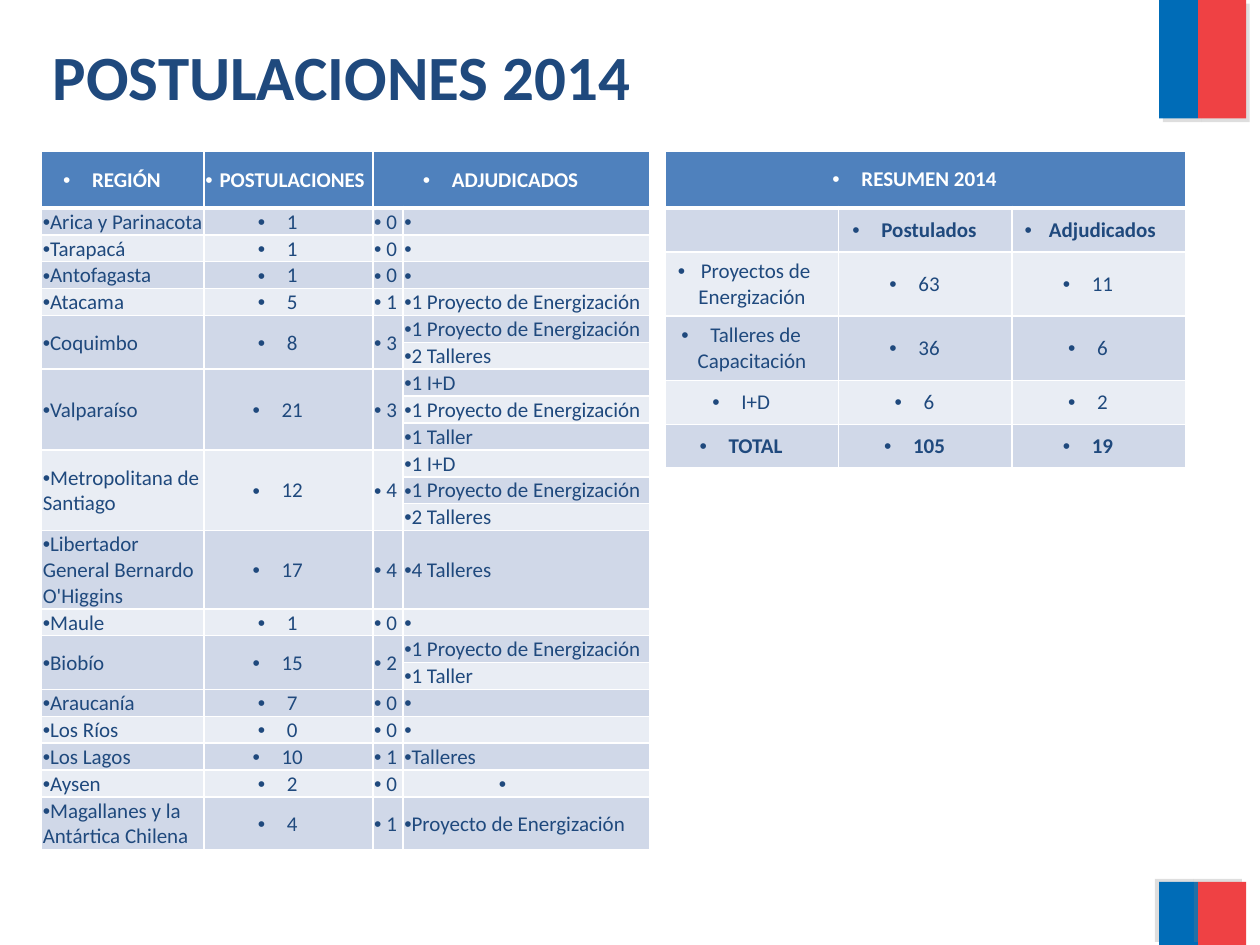
from lxml import etree
from pptx import Presentation
from pptx.dml.color import RGBColor
from pptx.enum.shapes import MSO_SHAPE
from pptx.enum.text import MSO_ANCHOR, PP_ALIGN
from pptx.oxml.ns import qn
from pptx.util import Inches, Pt

RECT = MSO_SHAPE.RECTANGLE
TOP, MIDDLE = MSO_ANCHOR.TOP, MSO_ANCHOR.MIDDLE
LEFT, CENTER = PP_ALIGN.LEFT, PP_ALIGN.CENTER
FONT = "Calibri"
NAVY, WHITE, HEAD = "1F497D", "FFFFFF", "4F81BD"
BANDS = ("E9EDF4", "D0D8E8")
BLANK = " "
LINE = 0.213

PROJECT = "1 Proyecto de Energización"
REGIONS = [
    ("Arica y Parinacota", 1, 0, [BLANK], 1),
    ("Tarapacá", 1, 0, [BLANK], 1),
    ("Antofagasta", 1, 0, [BLANK], 1),
    ("Atacama", 5, 1, [PROJECT], 1),
    ("Coquimbo", 8, 3, [PROJECT, "2 Talleres"], 1),
    ("Valparaíso", 21, 3, ["1 I+D", PROJECT, "1 Taller"], 1),
    ("Metropolitana de Santiago", 12, 4, ["1 I+D", PROJECT, "2 Talleres"], 1),
    ("Libertador General Bernardo O'Higgins", 17, 4, ["4 Talleres"], 3),
    ("Maule", 1, 0, [BLANK], 1),
    ("Biobío", 15, 2, [PROJECT, "1 Taller"], 1),
    ("Araucanía", 7, 0, [BLANK], 1),
    ("Los Ríos", 0, 0, [BLANK], 1),
    ("Los Lagos", 10, 1, ["Talleres"], 1),
    ("Aysen", 2, 0, [BLANK], 1),
    ("Magallanes y la Antártica Chilena", 4, 1, ["Proyecto de Energización"], 2),
]
SUMMARY = [
    ("", "Postulados", "Adjudicados"),
    ("Proyectos de Energización", 63, 11),
    ("Talleres de Capacitación", 36, 6),
    ("I+D", 6, 2),
    ("TOTAL", 105, 19),
]


def color(code):
    return RGBColor.from_string(code)


def style(para, size, code, bold):
    for run in para.runs:
        font = run.font
        font.name, font.size, font.bold = FONT, Pt(size), bold
        font.color.rgb = color(code)


def bullet(para, indent):
    props = para._p.get_or_add_pPr()
    props.set("marL", "0")
    props.set("indent", str(Inches(indent)))
    space = etree.SubElement(props, qn("a:spcBef"))
    etree.SubElement(space, qn("a:spcPct"), val="20000")
    etree.SubElement(props, qn("a:buFont"), typeface="Arial")
    etree.SubElement(props, qn("a:buChar"), char="•")


def fill_cell(cell, text, align=CENTER, code=NAVY, bold=False):
    cell.vertical_anchor = MIDDLE
    cell.text_frame.text = str(text)
    para = cell.text_frame.paragraphs[0]
    para.alignment = align
    if text == "":
        etree.SubElement(para._p, qn("a:endParaRPr"), sz="1200")
    else:
        bullet(para, -0.23 if align == CENTER else 0)
        style(para, 12, code, bold)


def underline(cell):
    line = etree.Element(qn("a:lnB"), w=str(Pt(3)))
    fill = etree.SubElement(line, qn("a:solidFill"))
    etree.SubElement(fill, qn("a:srgbClr"), val=WHITE)
    cell._tc.get_or_add_tcPr().insert(0, line)


def add_grid(slide, box, cols, rows, inset=None):
    frame = slide.shapes.add_table(len(rows), len(cols), *map(Inches, box))
    table = frame.table
    for col, width in zip(table.columns, cols):
        col.width = Inches(width)
    for pos, (row, height) in enumerate(zip(table.rows, rows)):
        row.height = Inches(height)
        for cell in row.cells:
            cell.fill.solid()
            cell.fill.fore_color.rgb = color(BANDS[pos % 2] if pos else HEAD)
            if pos == 0:
                underline(cell)
            if inset is not None:
                cell.margin_left = cell.margin_right = Inches(inset)
                cell.margin_top, cell.margin_bottom = Inches(inset), 0
    return table


def add_regions(slide, box):
    rows = [0.45]
    for *_, items, lines in REGIONS:
        rows += [LINE * lines if lines == 1 else 0.207 * lines] * len(items)
    table = add_grid(slide, box, (1.29, 1.34, 0.24, 1.96), rows, 0.01)
    table.cell(0, 2).merge(table.cell(0, 3))
    for col, text in enumerate(("REGIÓN", "POSTULACIONES", "ADJUDICADOS")):
        fill_cell(table.cell(0, col), text, code=WHITE, bold=True)
    top = 1
    for name, sent, won, items, _ in REGIONS:
        for col, text in enumerate((name, sent, won)):
            if len(items) > 1:
                table.cell(top, col).merge(table.cell(top + len(items) - 1, col))
            fill_cell(table.cell(top, col), text, CENTER if col else LEFT)
        for row, item in enumerate(items, top):
            fill_cell(table.cell(row, 3), item, CENTER if name == "Aysen" else LEFT)
        top += len(items)


def add_summary(slide, box):
    rows = (0.45, 0.35, 0.51, 0.51, 0.35, 0.34)
    table = add_grid(slide, box, [box[2] / 3] * 3, rows)
    table.cell(0, 0).merge(table.cell(0, 2))
    fill_cell(table.cell(0, 0), "RESUMEN 2014", code=WHITE, bold=True)
    for row, line in enumerate(SUMMARY, 1):
        for col, text in enumerate(line):
            fill_cell(table.cell(row, col), text, bold=row in (1, len(SUMMARY)))


def add_flag(slide, box, angle):
    left, top, width, height = box
    blue = 0.31
    parts = ((left, blue, "006CB7"), (left + blue, width - blue, "EF4144"))
    for start, wide, code in parts:
        shape = slide.shapes.add_shape(RECT, *map(Inches, (start, top, wide, height)))
        shape.fill.solid()
        shape.fill.fore_color.rgb = color(code)
        shape.line.fill.background()
        shape.shadow.inherit = False
        effect = shape._element.spPr.find(qn("a:effectLst"))
        shade = etree.SubElement(effect, qn("a:outerShdw"), dist=str(Pt(3)),
                                 dir=str(angle * 60000), algn="ctr", rotWithShape="0")
        tone = etree.SubElement(shade, qn("a:srgbClr"), val="808080")
        etree.SubElement(tone, qn("a:alpha"), val="25000")


def add_title(slide, box):
    title = slide.shapes.title
    title.left, title.top, title.width, title.height = map(Inches, box)
    frame = title.text_frame
    frame.text = "POSTULACIONES 2014"
    frame.vertical_anchor = TOP
    para = frame.paragraphs[0]
    para.alignment = LEFT
    style(para, 36, NAVY, True)


def main():
    deck = Presentation()
    deck.slide_width, deck.slide_height = Inches(10), Inches(7.5)
    slide = deck.slides.add_slide(deck.slide_layouts[5])
    add_flag(slide, (9.2, 0, 0.69, 0.94), 45)
    add_flag(slide, (9.2, 7, 0.69, 0.5), 215)
    add_title(slide, (0.32, 0.25, 8.93, 0.75))
    add_summary(slide, (5.28, 1.2, 4.13, 2.5))
    add_regions(slide, (0.33, 1.2, 4.83, 5.46))
    deck.save("out.pptx")


if __name__ == "__main__":
    main()
